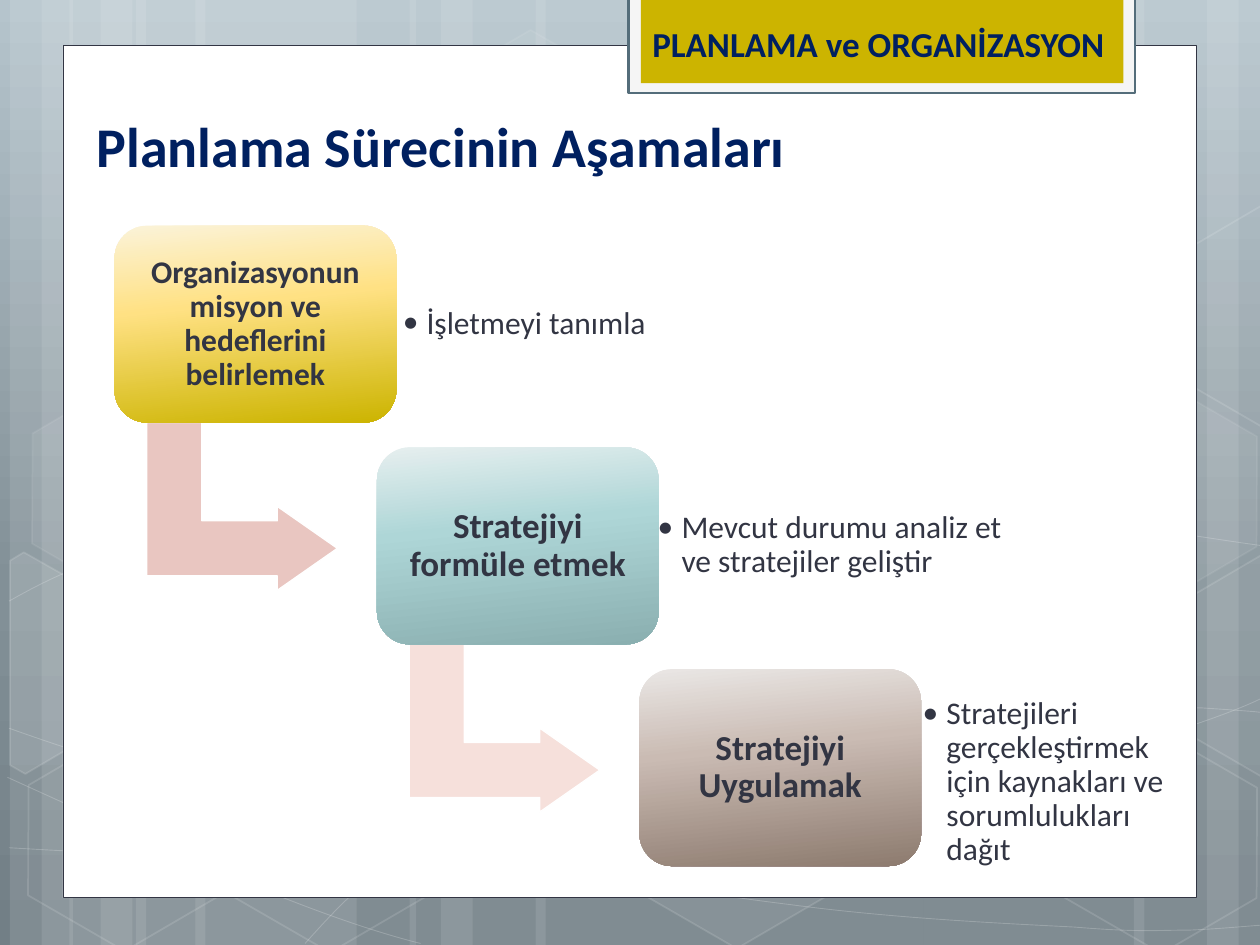
"""Builds a slide on the three stages of the planning process."""
import copy
import dataclasses
import math
import typing

import lxml.etree
import pptx
import pptx.dml.color
import pptx.enum.shapes
import pptx.enum.text
import pptx.oxml.ns
import pptx.util

Cm = pptx.util.Cm
Pt = pptx.util.Pt
qn = pptx.oxml.ns.qn
Kind = pptx.enum.shapes.MSO_SHAPE
Align = pptx.enum.text.PP_ALIGN
Anchor = pptx.enum.text.MSO_ANCHOR
Spot = tuple[float, float]
Box = tuple[float, float, float, float]
Stops = tuple[tuple[int, str], ...]


@dataclasses.dataclass(frozen=True)
class Theme:
    font: str = "Calibri"
    navy: str = "002060"
    ink: str = "323543"
    white: str = "FFFFFF"
    gold: str = "CCB400"
    pale: str = "F5F5F5"
    slate: str = "546D7A"
    sky: Stops = ((0, "B5C4CC"), (62, "829097"), (100, "727F86"))
    head: int = 32
    mid: int = 20
    small: int = 18


@dataclasses.dataclass(frozen=True)
class Hex:
    left: float
    top: float
    fill: int
    line: int


@dataclasses.dataclass(frozen=True)
class Patch:
    mid: Spot
    spots: tuple[Spot, ...]
    fill: int


@dataclasses.dataclass(frozen=True)
class Stage:
    name: str
    size: int
    stops: Stops
    note: str
    place: Box
    arrow: str = ""


THEME = Theme()
WIDE, HIGH = 25.4, 19.05
STEP_X, STEP_Y = 5.29, 4.47
TURN = 30

BANDS = (
    (2.74, 4.45), (0.2, 1.27), (0.84, 2.11), (3.94, 4.45), (1.4, 1.27), (2.03, 2.11),
    (18.62, 4.45), (24.33, 1.27), (22.86, 2.11), (10.8, 7.82), (8.26, 1.27), (8.89, 2.11),
)
CURVES = (
    ((0.18, 17.09), (1.55, 17.17), (2.92, 17.25), (4.83, 17.22), (6.73, 17.2),
     (9.09, 17.15), (11.63, 16.89), (14.17, 16.64), (17.78, 16.15), (20.12, 15.67),
     (22.43, 15.19), (24.82, 14.43), (25.58, 14)),
    ((0.18, 12.12), (0.91, 11.71), (1.65, 11.33), (3.07, 10.95), (4.52, 10.57),
     (6.58, 10.01), (8.81, 9.83), (11.07, 9.65), (13.82, 9.63), (16.61, 9.83),
     (19.41, 10.03), (24.05, 10.82), (25.58, 11.02)),
    ((0.15, 15.67), (3.23, 17.07), (6.27, 18.47), (8.48, 19.02)),
    ((0.18, 14.68), (0.97, 14.96), (1.78, 15.24), (3.25, 15.65), (4.72, 16.03),
     (6.93, 16.66), (9.07, 17.09), (11.18, 17.53), (13.84, 17.98), (15.95, 18.24),
     (18.06, 18.52), (20.32, 18.62), (21.67, 18.69), (22.99, 18.8), (23.34, 18.75),
     (24, 18.75), (24.66, 18.72), (25.12, 18.67), (25.58, 18.64)),
    ((6.15, 19.02), (6.6, 18.52), (7.06, 18.01), (7.67, 17.55), (8.28, 17.09),
     (9.14, 16.59), (9.86, 16.23), (10.57, 15.88), (11, 15.72), (11.94, 15.47),
     (12.85, 15.21), (14.55, 14.86), (15.44, 14.68), (16.36, 14.5), (16.48, 14.5),
     (17.27, 14.45), (18.06, 14.38), (19.3, 14.3), (20.17, 14.27), (21.06, 14.25),
     (22.5, 14.27), (22.5, 14.27), (23.1, 14.27), (23.7, 14.27), (24.21, 14.27),
     (24.66, 14.3), (25.1, 14.33), (25.32, 14.35), (25.55, 14.38), (25.48, 14.35),
     (25.55, 14.38)),
)
HEXES = (
    Hex(8.48, 0.91, 4, 8), Hex(12.62, 14.96, 6, 12), Hex(0.28, 15.01, 0, 12),
    Hex(0.36, 7.92, 7, 8), Hex(4.42, 15.04, 0, 12), Hex(19.13, 11.51, 10, 12),
    Hex(21.18, 15.06, 0, 12), Hex(21.18, 7.98, 7, 8),
)
PATCHES = (
    Patch((0.91, 13.59), ((0.2, 11.3), (0.48, 11.13), (2.44, 12.24), (2.41, 14.48),
                          (0.51, 15.6), (0.2, 15.42)), 10),
    Patch((25.02, 13.21), ((23.52, 12.32), (25.43, 11.2), (25.63, 11.33), (25.63, 15.67),
                           (25.45, 15.67), (23.52, 14.55)), 4),
    Patch((25.02, 6.12), ((23.52, 5.26), (25.43, 4.14), (25.65, 4.27), (25.63, 8.51),
                          (25.45, 8.61), (23.52, 7.49)), 0),
)
STAGES = (
    Stage("Organizasyonun misyon ve hedeflerini belirlemek", THEME.small,
          ((0, "FBF3D9"), (40, "FFE183"), (100, "CCB400")),
          "İşletmeyi tanımla", (7.94, 5.21, 6.58, 2.64), "E9C6C1"),
    Stage("Stratejiyi formüle etmek", THEME.mid,
          ((0, "E6EFEF"), (40, "AED6D7"), (100, "8AAFB0")),
          "Mevcut durumu analiz et ve stratejiler geliştir", (13.08, 9.4, 7.8, 3.2), "F6E0DB"),
    Stage("Stratejiyi Uygulamak", THEME.mid,
          ((0, "EAE7E5"), (40, "CABBB3"), (100, "8D7B6F")),
          "Stratejileri gerçekleştirmek için kaynakları ve sorumlulukları dağıt",
          (18.42, 14.17, 5.69, 3.2)),
)


def paint(fill: typing.Any, color: str, alpha: int = 100) -> None:
    if not alpha:
        fill.background()
        return
    fill.solid()
    fill.fore_color.rgb = pptx.dml.color.RGBColor.from_string(color)
    if alpha < 100:
        tone = fill._xPr.find(qn("a:solidFill"))[0]
        lxml.etree.SubElement(tone, qn("a:alpha")).set("val", str(alpha * 1000))


def fade(fill: typing.Any, stops: Stops, angle: int) -> None:
    fill.gradient()
    fill.gradient_angle = 360 - angle
    marks = fill._fill._gradFill.gsLst
    marks.append(copy.deepcopy(marks[-1]))
    for mark, (place, color) in zip(fill.gradient_stops, stops):
        mark.position = place / 100
        mark.color.rgb = pptx.dml.color.RGBColor.from_string(color)


def edge(shape: typing.Any, color: str, width: float, alpha: int = 100) -> None:
    paint(shape.line.fill, color, alpha)
    shape.line.width = Pt(width)


def block(slide: typing.Any, kind: typing.Any, box: Box, color: str, alpha: int = 100) -> typing.Any:
    shape = slide.shapes.add_shape(kind, *map(Cm, box))
    shape.shadow.inherit = False
    shape.line.fill.background()
    paint(shape.fill, color, alpha)
    return shape


def trace(slide: typing.Any, spots: typing.Sequence[Spot], close: bool) -> typing.Any:
    points = [(Cm(x), Cm(y)) for x, y in spots]
    pen = slide.shapes.build_freeform(*points[0])
    pen.add_line_segments(points[1:], close=close)
    shape = pen.convert_to_shape()
    shape.shadow.inherit = False
    return shape


def bend(shape: typing.Any) -> None:
    lines = list(shape._element.iter(qn("a:lnTo")))
    for i in range(0, len(lines), 3):
        lines[i].addprevious(curve := lxml.etree.Element(qn("a:cubicBezTo")))
        for line in lines[i:i + 3]:
            curve.append(line[0])
            line.getparent().remove(line)


def spin(spot: Spot, mid: Spot) -> Spot:
    cos, sin = math.cos(math.radians(TURN)), math.sin(math.radians(TURN))
    x, y = spot[0] - mid[0], spot[1] - mid[1]
    return mid[0] + x * cos + y * sin, mid[1] - x * sin + y * cos


def write(shape: typing.Any, text: str, size: int, color: str, bold: bool = True,
          inset: float | None = None, dot: bool = False) -> None:
    frame = shape.text_frame
    frame.word_wrap = True
    frame.text = text
    line = frame.paragraphs[0]
    if inset is not None:
        frame.margin_left = frame.margin_right = Cm(inset)
        frame.margin_top = frame.margin_bottom = Cm(inset)
        frame.vertical_anchor = Anchor.MIDDLE
        line.line_spacing = 0.9
        line.alignment = Align.LEFT if dot else Align.CENTER
    if dot:
        props = line._p.get_or_add_pPr()
        props.set("marL", str(Cm(0.48)))
        props.set("indent", str(-Cm(0.48)))
        lxml.etree.SubElement(props, qn("a:buFont")).set("typeface", THEME.font)
        lxml.etree.SubElement(props, qn("a:buChar")).set("char", "•")
    font = line.runs[0].font
    font.name, font.size, font.bold = THEME.font, Pt(size), bold
    font.color.rgb = pptx.dml.color.RGBColor.from_string(color)


def label(slide: typing.Any, box: Box, *args: typing.Any, **style: typing.Any) -> None:
    write(slide.shapes.add_textbox(*map(Cm, box)), *args, **style)


def scene(slide: typing.Any) -> None:
    fade(slide.background.fill, THEME.sky, 90)
    for left, width in BANDS:
        block(slide, Kind.RECTANGLE, (left, 0, width, HIGH), THEME.white, 10)
    for knots in CURVES:
        curve = trace(slide, knots, False)
        bend(curve)
        curve.fill.background()
        edge(curve, THEME.white, 0.5, 20)
    for item in HEXES:
        cell = block(slide, Kind.HEXAGON, (item.left, item.top, 4.45, 3.86), THEME.white, item.fill)
        cell.adjustments[0], cell.adjustments[1] = 0.285, 1.155
        cell.rotation = TURN
        edge(cell, THEME.white, 1, item.line)
    for patch in PATCHES:
        shape = trace(slide, [spin(spot, patch.mid) for spot in patch.spots], True)
        shape.rotation = TURN
        paint(shape.fill, THEME.white, patch.fill)
        edge(shape, THEME.white, 1, 12)


def stage(slide: typing.Any, item: Stage, left: float, top: float) -> None:
    if item.arrow:
        arrow = block(slide, Kind.BENT_UP_ARROW, (left + 0.88, top + 3.74, 3.38, 3.84), item.arrow)
        arrow.rotation = 90
        for i, ratio in enumerate((0.328, 0.25, 0.358)):
            arrow.adjustments[i] = ratio
        edge(arrow, THEME.white, 0.75)
    card = block(slide, Kind.ROUNDED_RECTANGLE, (left, top, 5.68, 3.97), THEME.white)
    fade(card.fill, item.stops, 84)
    write(card, item.name, item.size, THEME.ink, inset=0.19)
    label(slide, item.place, item.note, THEME.small, THEME.ink, bold=False, inset=0.18, dot=True)


def main() -> None:
    deck = pptx.Presentation()
    deck.slide_width, deck.slide_height = Cm(WIDE), Cm(HIGH)
    slide = deck.slides.add_slide(deck.slide_layouts[6])
    scene(slide)
    edge(block(slide, Kind.RECTANGLE, (1.27, 0.91, 22.86, 17.19), THEME.white), THEME.ink, 0.5)
    edge(block(slide, Kind.RECTANGLE, (12.67, -0.05, 10.21, 1.93), THEME.pale), THEME.slate, 1.25)
    block(slide, Kind.RECTANGLE, (12.92, -0.05, 9.73, 1.73), THEME.gold)
    label(slide, (12.9, 0.33, 10.59, 1.12), "PLANLAMA ve ORGANİZASYON", THEME.mid, THEME.navy)
    label(slide, (1.7, 2.13, 18.59, 1.63), "Planlama Sürecinin Aşamaları", THEME.head, THEME.navy)
    for i, item in enumerate(STAGES):
        stage(slide, item, 2.31 + i * STEP_X, 4.55 + i * STEP_Y)
    deck.save("out.pptx")


if __name__ == "__main__":
    main()
